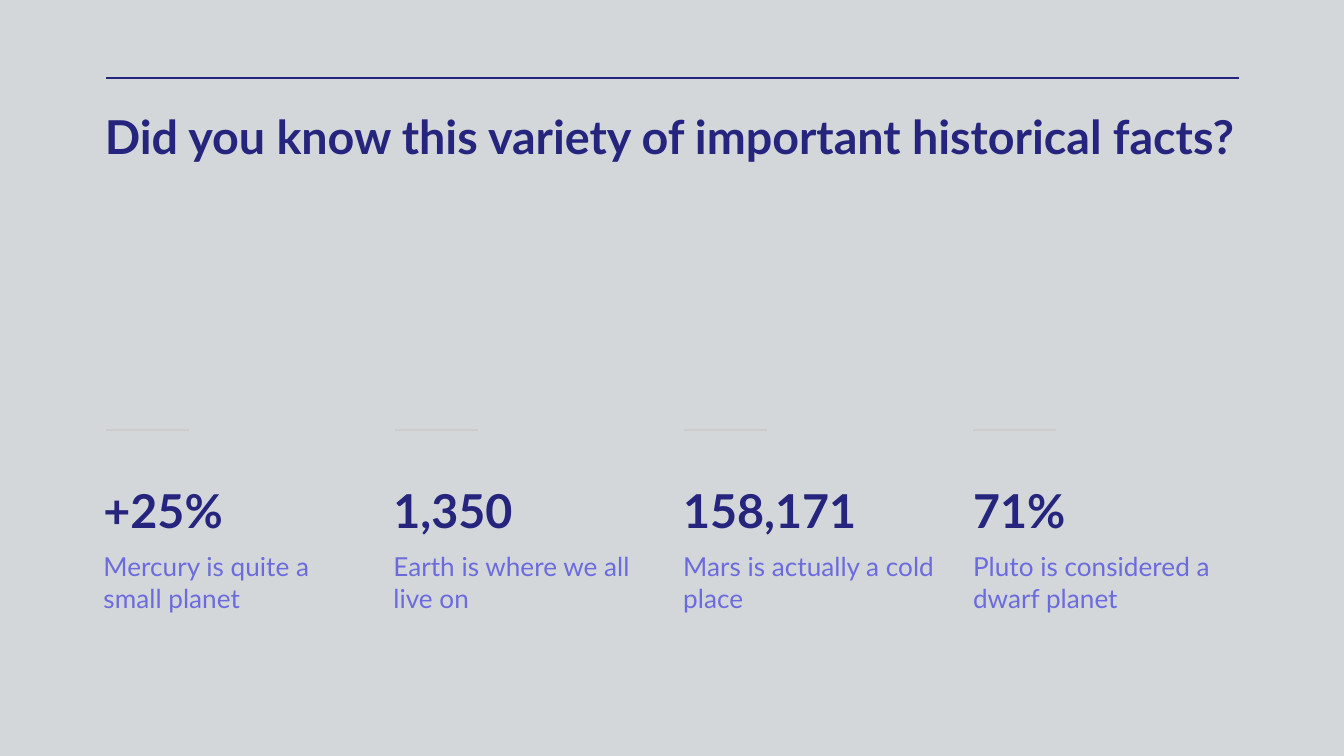
from dataclasses import dataclass

from lxml.etree import SubElement
from pptx import Presentation
from pptx.dml.color import RGBColor
from pptx.enum.shapes import MSO_CONNECTOR as Connector
from pptx.enum.text import MSO_ANCHOR as Anchor
from pptx.oxml.ns import qn
from pptx.slide import Slide
from pptx.util import Inches, Pt


@dataclass(frozen=True)
class Theme:
    font: str = "Lato"
    background: str = "D4D7D9"
    heading: str = "25257E"
    caption: str = "6B6BDE"
    divider: str = "CCCCCC"
    heading_size: float = 25
    caption_size: float = 14
    line_width: float = 1.5


@dataclass(frozen=True)
class Fact:
    figure: str
    caption: str


THEME = Theme()
FACTS = [
    Fact("+25%", "Mercury is quite a small planet"),
    Fact("1,350", "Earth is where we all live on"),
    Fact("158,171", "Mars is actually a cold place"),
    Fact("71%", "Pluto is considered a dwarf planet"),
]
SLIDE_WIDTH = 10
SLIDE_HEIGHT = SLIDE_WIDTH * 9 / 16
LAST_COLUMN_LEFT = 7.24
FACT_LEFT = 0.77
FACT_PITCH = (LAST_COLUMN_LEFT - FACT_LEFT) / (len(FACTS) - 1)
FACT_WIDTH = 1.98
DIVIDER_LEFT = 0.79
DIVIDER_PITCH = (LAST_COLUMN_LEFT - DIVIDER_LEFT) / (len(FACTS) - 1)
DIVIDER_WIDTH = 0.62


def add_text(
    slide: Slide,
    text: str,
    *,
    left: float,
    top: float,
    width: float,
    height: float,
    size: float = THEME.heading_size,
    color: str = THEME.heading,
    bold: bool = True,
    anchor: Anchor = Anchor.MIDDLE,
    vertical_inset: float = 0,
) -> None:
    shape = slide.shapes.add_textbox(
        Inches(left), Inches(top), Inches(width), Inches(height)
    )
    frame = shape.text_frame
    frame.word_wrap = True
    frame.vertical_anchor = anchor
    frame.margin_left = frame.margin_right = Inches(0)
    frame.margin_top = frame.margin_bottom = Inches(vertical_inset)
    run = frame.paragraphs[0].add_run()
    run.text = text
    run.font.name = THEME.font
    run.font.size = Pt(size)
    run.font.bold = bold
    run.font.color.rgb = RGBColor.from_string(color)


def add_rule(slide: Slide, left: float, top: float, width: float, color: str) -> None:
    rule = slide.shapes.add_connector(
        Connector.STRAIGHT,
        Inches(left), Inches(top), Inches(left + width), Inches(top),
    )
    rule.line.color.rgb = RGBColor.from_string(color)
    rule.line.width = Pt(THEME.line_width)
    SubElement(rule._element.spPr, qn("a:effectLst"))


def add_fact(slide: Slide, fact: Fact, column: int) -> None:
    left = FACT_LEFT + column * FACT_PITCH
    add_text(slide, fact.figure, left=left, top=3.51, width=FACT_WIDTH, height=0.57)
    add_text(
        slide, fact.caption,
        left=left, top=4.08, width=FACT_WIDTH, height=0.5,
        size=THEME.caption_size, color=THEME.caption, bold=False, vertical_inset=0.1,
    )
    divider_left = DIVIDER_LEFT + column * DIVIDER_PITCH
    add_rule(slide, divider_left, 3.2, DIVIDER_WIDTH, THEME.divider)


def main() -> None:
    presentation = Presentation()
    presentation.slide_width = Inches(SLIDE_WIDTH)
    presentation.slide_height = Inches(SLIDE_HEIGHT)
    slide = presentation.slides.add_slide(presentation.slide_layouts[6])
    slide.background.fill.solid()
    slide.background.fill.fore_color.rgb = RGBColor.from_string(THEME.background)

    add_rule(slide, 0.79, 0.58, 8.43, THEME.heading)
    add_text(
        slide, "Did you know this variety of important historical facts?",
        left=0.78, top=0.8, width=8.44, height=0.91, anchor=Anchor.TOP,
    )
    for column, fact in enumerate(FACTS):
        add_fact(slide, fact, column)

    presentation.save("out.pptx")


if __name__ == "__main__":
    main()
